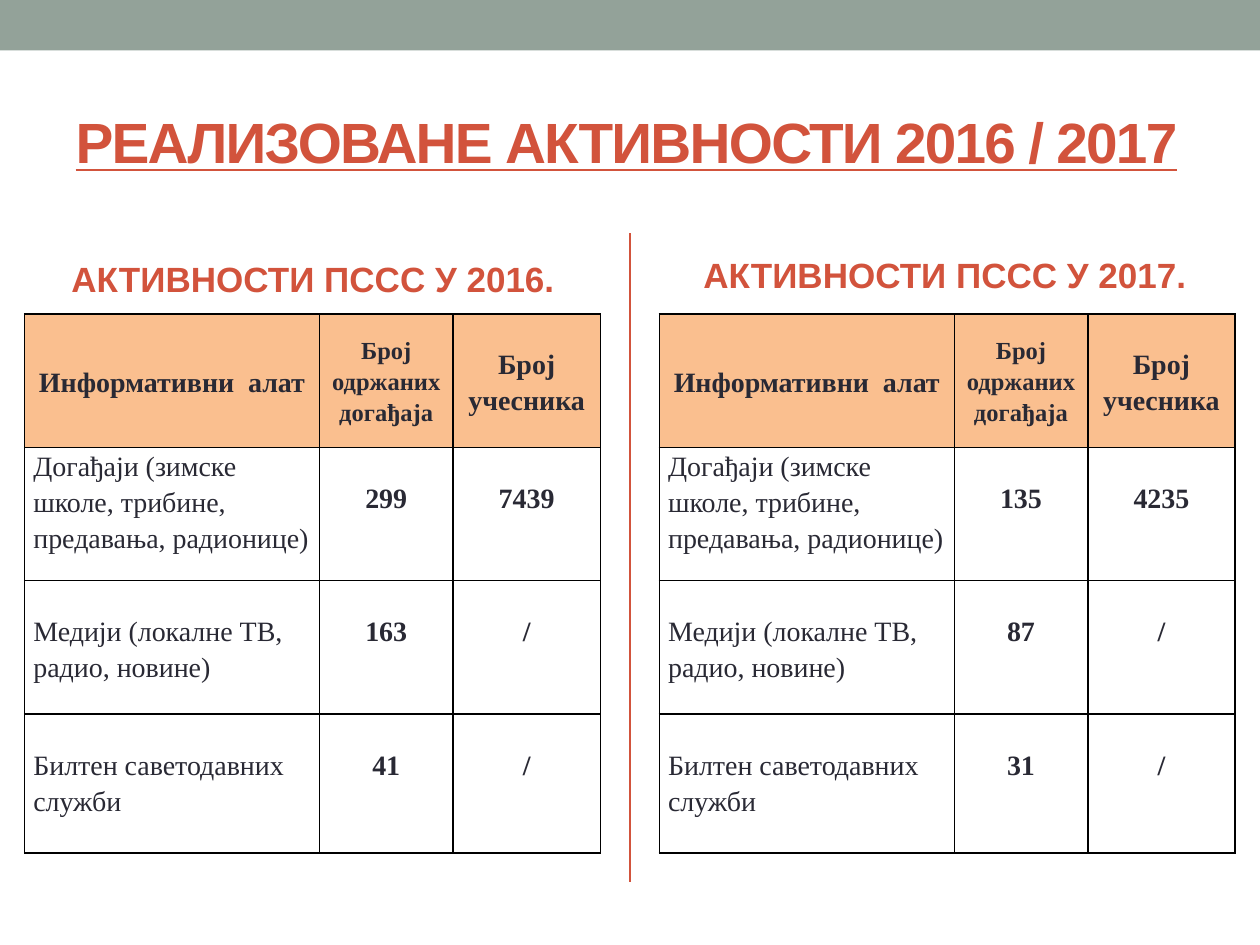
from lxml import etree
from pptx import Presentation
from pptx.dml.color import RGBColor
from pptx.enum.shapes import MSO_CONNECTOR, MSO_SHAPE
from pptx.enum.text import MSO_ANCHOR, MSO_AUTO_SIZE, PP_ALIGN
from pptx.oxml.ns import qn
from pptx.util import Pt

CENTER, LEFT = PP_ALIGN.CENTER, PP_ALIGN.LEFT
MIDDLE, TOP = MSO_ANCHOR.MIDDLE, MSO_ANCHOR.TOP
NO_FIT = MSO_AUTO_SIZE.NONE
RECTANGLE, STRAIGHT = MSO_SHAPE.RECTANGLE, MSO_CONNECTOR.STRAIGHT

ACCENT, BAND, INK, HEADER, BORDER = "D2533C", "93A299", "292934", "FABF8F", "000000"
COMPARISON_LAYOUT = 4

COLUMN_WIDTHS = (168.5, 76.3, 84.2)
ROW_HEIGHTS = (76.3, 76.3, 76.3, 79.4)
HEADINGS = (("Информативни  алат", 16), ("Број одржаних догађаја", 14), ("Број учесника", 16))
TOOLS = (
    "Догађаји (зимске школе, трибине, предавања, радионице)",
    "Медији (локалне ТВ, радио, новине)",
    "Билтен саветодавних служби",
)
# heading, heading box, table corner, (events, participants) for each tool
YEARS = (
    ("АКТИВНОСТИ ПССС У 2016.", (14.4, 133.9, 329, 50.4), (14.1, 179.3),
     (("299", "7439"), ("163", "/"), ("41", "/"))),
    ("АКТИВНОСТИ ПССС У 2017.", (374.4, 131.8, 331.2, 50.4), (376.8, 179.3),
     (("135", "4235"), ("87", "/"), ("31", "/"))),
)


def color(value):
    return RGBColor.from_string(value)


def style_paragraph(p, name, size, ink, bold, align):
    p.alignment = align
    p.font.name, p.font.size, p.font.bold = name, Pt(size), bold
    p.font.color.rgb = color(ink)


def fill_placeholder(ph, box, text, size, align):
    ph.left, ph.top, ph.width, ph.height = map(Pt, box)
    tf = ph.text_frame
    tf.text = text
    tf.word_wrap, tf.auto_size, tf.vertical_anchor = True, NO_FIT, MIDDLE
    p = tf.paragraphs[0]
    style_paragraph(p, "Arial", size, ACCENT, True, align)
    return p


def add_band(s, box):
    sp = s.shapes.add_shape(RECTANGLE, *map(Pt, box))
    sp.shadow.inherit = False
    sp.fill.solid()
    sp.fill.fore_color.rgb = color(BAND)
    sp.line.fill.background()


def add_divider(s, x, top, bottom):
    line = s.shapes.add_connector(STRAIGHT, Pt(x), Pt(top), Pt(x), Pt(bottom))
    line.line.color.rgb = color(ACCENT)
    line.line.width = Pt(1.5)
    etree.SubElement(line._element.spPr, qn("a:effectLst"))


def add_title(s, box):
    p = fill_placeholder(s.shapes.title, box, "РЕАЛИЗОВАНЕ АКТИВНОСТИ 2016 / 2017", 32.4, LEFT)
    p.font.underline = True
    p.runs[0]._r.get_or_add_rPr().set("spc", "-100")


def set_borders(cell):
    tc_pr = cell._tc.get_or_add_tcPr()
    for i, side in enumerate(("lnL", "lnR", "lnT", "lnB")):
        ln = etree.Element(qn(f"a:{side}"), w=str(Pt(1)))
        solid = etree.SubElement(ln, qn("a:solidFill"))
        etree.SubElement(solid, qn("a:srgbClr"), val=BORDER)
        tc_pr.insert(i, ln)


def fill_cell(cell, text, size=16, bold=True, align=CENTER, anchor=TOP, top=0, fill=None):
    cell.text = text
    cell.margin_left = cell.margin_right = Pt(5)
    cell.margin_top, cell.margin_bottom = Pt(top), Pt(0)
    cell.vertical_anchor = anchor
    p = cell.text_frame.paragraphs[0]
    style_paragraph(p, "Times New Roman", size, INK, bold, align)
    p.line_spacing = 1.15
    if fill:
        cell.fill.solid()
        cell.fill.fore_color.rgb = color(fill)
    else:
        cell.fill.background()
    set_borders(cell)


def add_activity_table(s, corner, counts):
    size = sum(COLUMN_WIDTHS), sum(ROW_HEIGHTS)
    table = s.shapes.add_table(len(ROW_HEIGHTS), len(COLUMN_WIDTHS),
                               *map(Pt, corner + size)).table
    for column, width in zip(table.columns, COLUMN_WIDTHS):
        column.width = Pt(width)
    for row, height in zip(table.rows, ROW_HEIGHTS):
        row.height = Pt(height)
    for c, (text, points) in enumerate(HEADINGS):
        fill_cell(table.cell(0, c), text, points, anchor=MIDDLE, fill=HEADER)
    for r, (tool, values) in enumerate(zip(TOOLS, counts), 1):
        fill_cell(table.cell(r, 0), tool, bold=False, align=LEFT, top=0 if r == 1 else 18)
        for c, value in enumerate(values, 1):
            fill_cell(table.cell(r, c), value, top=18)


def add_year(s, ph, heading, box, corner, counts):
    p = fill_placeholder(ph, box, heading, 20, CENTER)
    p.space_before = Pt(4)
    add_activity_table(s, corner, counts)


def main():
    prs = Presentation()
    prs.slide_width, prs.slide_height = Pt(720), Pt(540)
    s = prs.slides.add_slide(prs.slide_layouts[COMPARISON_LAYOUT])
    _, left_head, left_body, right_head, right_body = list(s.placeholders)
    for ph in (left_body, right_body):
        ph._element.getparent().remove(ph._element)

    add_band(s, (0, 0, 720, 28.8))
    add_divider(s, 360, 133.2, 504)
    add_title(s, (36, 41.8, 648, 77.8))
    for ph, year in zip((left_head, right_head), YEARS):
        add_year(s, ph, *year)
    prs.save("out.pptx")


if __name__ == "__main__":
    main()
